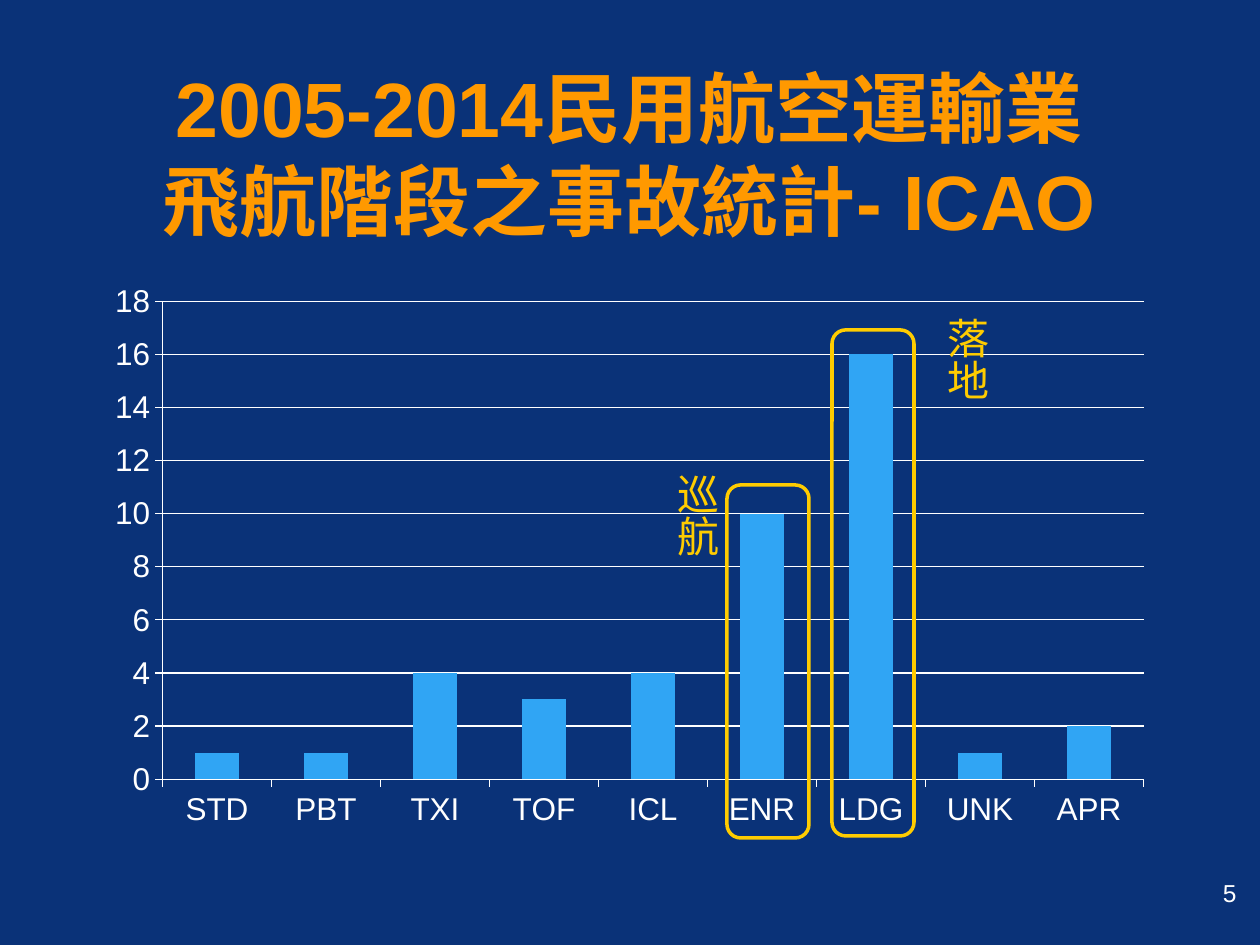
from typing import NamedTuple

from lxml import etree
from pptx import Presentation
from pptx import util as u
from pptx.chart import data
from pptx.dml import color
from pptx.enum import chart as charts, shapes, text
from pptx.oxml import ns, parse_xml

PX_PER_INCH = 126
NAVY, ORANGE, YELLOW, WHITE, BLUE = "0A3278", "FF9900", "FFCC00", "FFFFFF", "30A5F4"
LATIN, CJK = "Arial", "Noto Sans CJK SC"


class Area(NamedTuple):
    left: int
    top: int
    width: int
    height: int


class Style(NamedTuple):
    size: int
    ink: str
    font: str = LATIN
    bold: bool = False


class Phase(NamedTuple):
    name: str
    frame: Area
    label: Area


TITLE = ["2005-2014民用航空運輸業", "飛航階段之事故統計- ICAO"]
ACCIDENTS = {"STD": 1, "PBT": 1, "TXI": 4, "TOF": 3, "ICL": 4,
             "ENR": 10, "LDG": 16, "UNK": 1, "APR": 2}
PHASES = [
    Phase("落地", Area(832, 330, 82, 506), Area(921, 305, 77, 112)),
    Phase("巡航", Area(727, 485, 82, 353), Area(651, 461, 77, 112)),
]


def px(length: int) -> u.Emu:
    return u.Emu(round(length * 914400 / PX_PER_INCH))


def place(area: Area) -> list[u.Emu]:
    return [px(length) for length in area]


def rgb(value: str) -> color.RGBColor:
    return color.RGBColor.from_string(value)


def paint(fill, value: str) -> None:
    fill.solid()
    fill.fore_color.rgb = rgb(value)


def add_text(page, area: Area, lines: list[str], style: Style,
             align=text.PP_ALIGN.LEFT, anchor=text.MSO_ANCHOR.TOP):
    box = page.shapes.add_textbox(*place(area))
    frame = box.text_frame
    frame.word_wrap = True
    frame.vertical_anchor = anchor
    para = frame.paragraphs[0]
    para.alignment = align
    for index, line in enumerate(lines):
        if index:
            para.add_line_break()
        span = para.add_run()
        span.text = line
        span.font.size = u.Pt(style.size)
        span.font.bold = style.bold
        span.font.color.rgb = rgb(style.ink)
        span.font.name = style.font
        east_asian = etree.SubElement(span._r.get_or_add_rPr(), ns.qn("a:ea"))
        east_asian.set("typeface", CJK)
    return box


def add_accident_chart(page, area: Area) -> None:
    numbers = data.CategoryChartData()
    numbers.categories = list(ACCIDENTS)
    numbers.add_series("Series 1", list(ACCIDENTS.values()))
    chart = page.shapes.add_chart(
        charts.XL_CHART_TYPE.COLUMN_CLUSTERED, *place(area), numbers).chart
    chart.has_legend = False
    chart.has_title = False
    chart.font.size = u.Pt(18)
    chart.font.name = LATIN
    chart.font.color.rgb = rgb(WHITE)

    plot = chart.plots[0]
    plot.vary_by_categories = False
    plot.gap_width = 150
    paint(plot.series[0].format.fill, BLUE)

    counts = chart.value_axis
    counts.minimum_scale, counts.maximum_scale, counts.major_unit = 0, 18, 2
    counts.has_major_gridlines = True
    for axis in (chart.category_axis, counts):
        axis.major_tick_mark = charts.XL_TICK_MARK.OUTSIDE
    for part in (chart.category_axis, counts, counts.major_gridlines):
        part.format.line.width = u.Pt(0.75)
        part.format.line.color.rgb = rgb(WHITE)
    set_plot_layout(chart, x=0.064, y=0.05, w=0.916, h=0.843)


def set_plot_layout(chart, **share: float) -> None:
    plot_area = chart.element.find(".//" + ns.qn("c:plotArea"))
    for old in plot_area.findall(ns.qn("c:layout")):
        plot_area.remove(old)
    settings = {"layoutTarget": "inner", "xMode": "edge", "yMode": "edge", **share}
    entries = "".join(f'<c:{key} val="{value}"/>' for key, value in settings.items())
    plot_area.insert(0, parse_xml(
        f'<c:layout {ns.nsdecls("c")}><c:manualLayout>{entries}</c:manualLayout></c:layout>'))


def add_phase(page, phase: Phase) -> None:
    frame = page.shapes.add_shape(
        shapes.MSO_SHAPE.ROUNDED_RECTANGLE, *place(phase.frame))
    frame.shadow.inherit = False
    frame.fill.background()
    frame.line.color.rgb = rgb(YELLOW)
    frame.line.width = u.Pt(2)
    label = add_text(page, phase.label, [phase.name], Style(24, YELLOW, CJK))
    label.text_frame.auto_size = text.MSO_AUTO_SIZE.SHAPE_TO_FIT_TEXT
    label.element.txBody.bodyPr.set("vert", "eaVert")


def main() -> None:
    deck = Presentation()
    deck.slide_width, deck.slide_height = px(1260), px(945)
    page = deck.slides.add_slide(deck.slide_layouts[6])
    paint(page.background.fill, NAVY)
    add_text(page, Area(94, 74, 1071, 158), TITLE, Style(44, ORANGE, bold=True),
             text.PP_ALIGN.CENTER, text.MSO_ANCHOR.MIDDLE)
    add_accident_chart(page, Area(94, 273, 1071, 567))
    add_text(page, Area(1165, 872, 84, 53), ["5"], Style(14, WHITE),
             text.PP_ALIGN.RIGHT)
    for phase in PHASES:
        add_phase(page, phase)
    deck.save("out.pptx")


if __name__ == "__main__":
    main()
